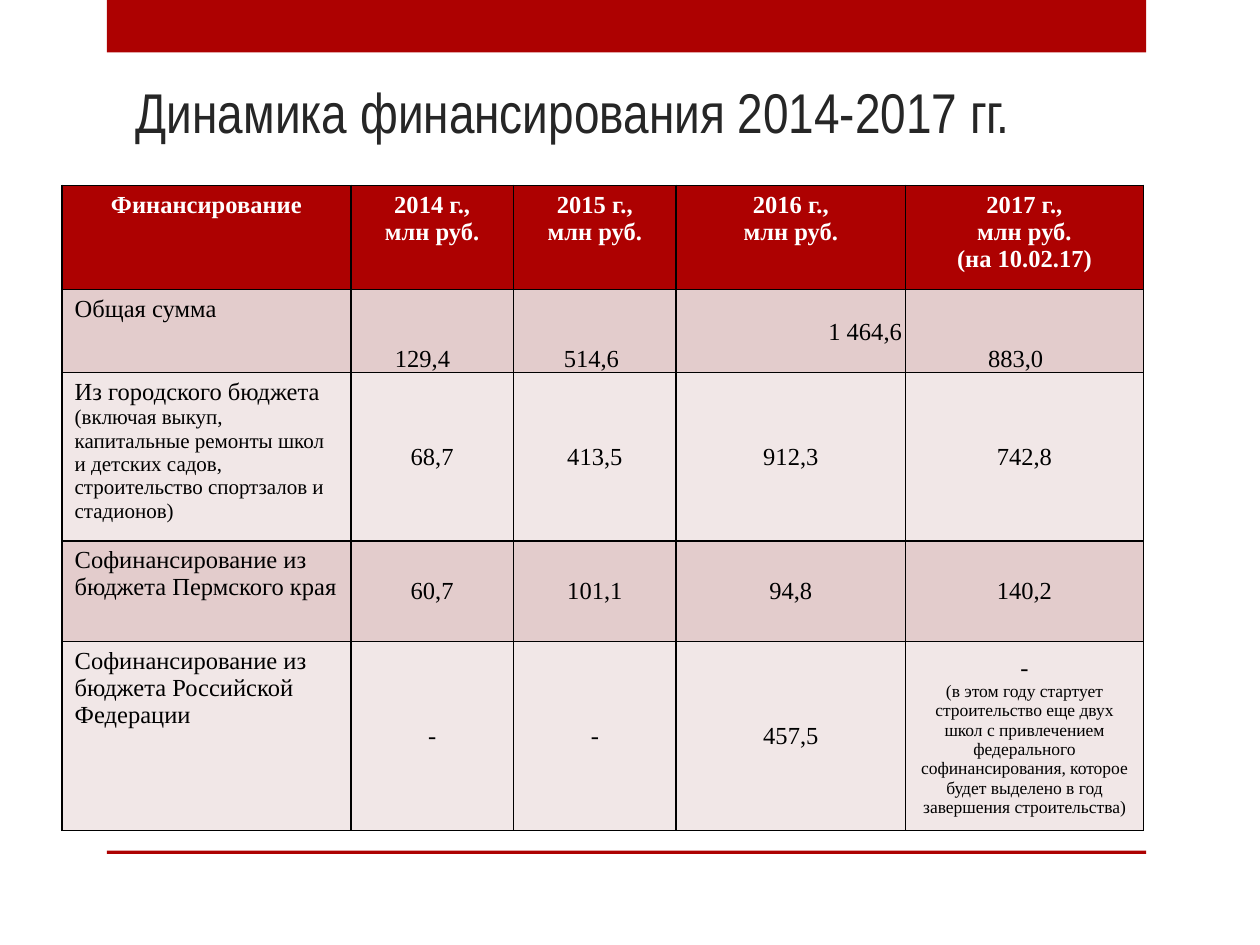
from lxml import etree
from pptx import Presentation
from pptx.dml.color import RGBColor
from pptx.enum.shapes import MSO_SHAPE
from pptx.enum.text import MSO_ANCHOR, PP_ALIGN
from pptx.oxml.ns import qn
from pptx.util import Pt

RECT = MSO_SHAPE.RECTANGLE
TOP, MIDDLE, BOTTOM = MSO_ANCHOR.TOP, MSO_ANCHOR.MIDDLE, MSO_ANCHOR.BOTTOM
LEFT, CENTER, RIGHT = PP_ALIGN.LEFT, PP_ALIGN.CENTER, PP_ALIGN.RIGHT

COLORS = {
    "red": "AD0101", "title": "262626", "white": "FFFFFF",
    "black": "000000", "dark": "E3CCCC", "light": "F1E7E7",
}
SERIF = "Times New Roman"
HEAD = {"name": SERIF, "size": Pt(14), "bold": True}
BODY = {"name": SERIF, "size": Pt(14), "bold": False}
TITLE = {"name": "Arial Narrow", "size": Pt(32)}

WIDTHS = [165, 93, 93, 131, 136]
HEIGHTS = [59.5, 47.5, 89, 57.5, 99.5]
ROWS = [
    ["Финансирование", "2014 г.,\nмлн руб.", "2015 г.,\nмлн руб.",
     "2016 г.,\nмлн руб.", "2017 г.,\nмлн руб.\n(на 10.02.17)"],
    ["Общая сумма", "129,4", "514,6", "1 464,6", "883,0"],
    ["Из городского бюджета ", "68,7", "413,5", "912,3", "742,8"],
    ["Софинансирование из бюджета Пермского края",
     "60,7", "101,1", "94,8", "140,2"],
    ["Софинансирование из бюджета Российской Федерации",
     "-", "-", "457,5", "-"],
]
BUDGET_NOTE = ("(включая выкуп, капитальные ремонты школ и детских садов, "
               "строительство спортзалов и стадионов)")
STATE_NOTE = ("(в этом году стартует строительство еще двух школ с "
              "привлечением федерального софинансирования, которое будет "
              "выделено в год завершения строительства)")
TOTALS = {
    1: (BOTTOM, CENTER, 12), 2: (BOTTOM, CENTER, 5),
    3: (MIDDLE, RIGHT, 2), 4: (BOTTOM, CENTER, 11),
}


def rgb(key):
    return RGBColor.from_string(COLORS[key])


def add_bar(slide, top, height):
    bar = slide.shapes.add_shape(RECT, Pt(61), Pt(top), Pt(594), Pt(height))
    bar.shadow.inherit = False
    bar.fill.solid()
    bar.fill.fore_color.rgb = rgb("red")
    bar.line.fill.background()


def add_run(para, text, style, color):
    run = para.add_run()
    run.text = text
    for key, value in style.items():
        setattr(run.font, key, value)
    run.font.color.rgb = rgb(color)


def add_title(slide, text):
    box = slide.shapes.add_textbox(Pt(70.5), Pt(40.5), Pt(641), Pt(126))
    box.text_frame.word_wrap = True
    add_run(box.text_frame.paragraphs[0], text, TITLE, "title")


def add_edges(cell):
    props = cell._tc.get_or_add_tcPr()
    for index, tag in enumerate(("a:lnL", "a:lnR", "a:lnT", "a:lnB")):
        line = etree.Element(qn(tag), w=str(Pt(1)))
        fill = etree.SubElement(line, qn("a:solidFill"))
        etree.SubElement(fill, qn("a:srgbClr"), val=COLORS["black"])
        props.insert(index, line)


def fill_cell(cell, text, fill, style, color, align, anchor):
    cell.fill.solid()
    cell.fill.fore_color.rgb = rgb(fill)
    cell.vertical_anchor = anchor
    frame = cell.text_frame
    for index, line in enumerate(text.split("\n")):
        para = frame.add_paragraph() if index else frame.paragraphs[0]
        para.alignment = align
        add_run(para, line, style, color)
    add_edges(cell)


def set_total(cell, anchor, align, right):
    sides = {"left": 1, "top": 1, "right": right, "bottom": 0}
    for side, size in sides.items():
        setattr(cell, "margin_" + side, Pt(size))
    cell.vertical_anchor = anchor
    cell.text_frame.paragraphs[0].alignment = align


def add_grid(slide):
    grid = slide.shapes.add_table(
        len(ROWS), len(WIDTHS), Pt(35.5), Pt(106),
        Pt(sum(WIDTHS)), Pt(sum(HEIGHTS))).table
    for col, width in zip(grid.columns, WIDTHS):
        col.width = Pt(width)
    for row, height in zip(grid.rows, HEIGHTS):
        row.height = Pt(height)
    for r, texts in enumerate(ROWS):
        fill = "red" if r == 0 else "dark" if r % 2 else "light"
        style, color = (BODY, "black") if r else (HEAD, "white")
        for c, text in enumerate(texts):
            align = LEFT if r and c == 0 else CENTER
            anchor = MIDDLE if r and c else TOP
            fill_cell(grid.cell(r, c), text, fill, style, color, align, anchor)
    for c, place in TOTALS.items():
        set_total(grid.cell(1, c), *place)
    add_run(grid.cell(2, 0).text_frame.paragraphs[0], BUDGET_NOTE,
            {**BODY, "size": Pt(12)}, "black")
    note = grid.cell(4, 4).text_frame.add_paragraph()
    note.alignment = CENTER
    add_run(note, STATE_NOTE, {**BODY, "size": Pt(10)}, "black")


def main():
    deck = Presentation()
    deck.slide_width, deck.slide_height = Pt(720), Pt(540)
    slide = deck.slides.add_slide(deck.slide_layouts[6])
    add_bar(slide, 0, 30)
    add_bar(slide, 486, 2)
    add_title(slide, "Динамика финансирования 2014-2017 гг.")
    add_grid(slide)
    deck.save("out.pptx")


if __name__ == "__main__":
    main()
